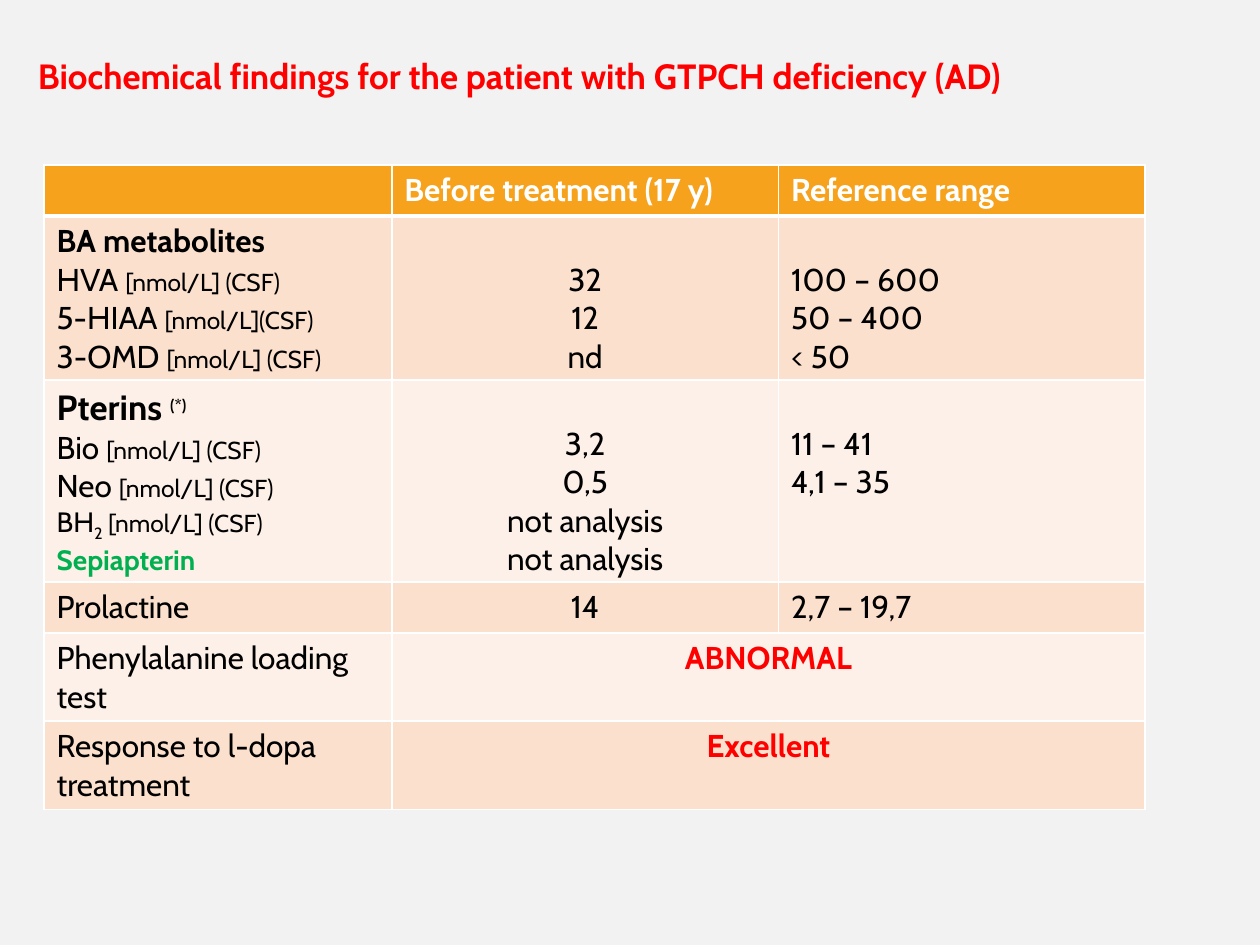
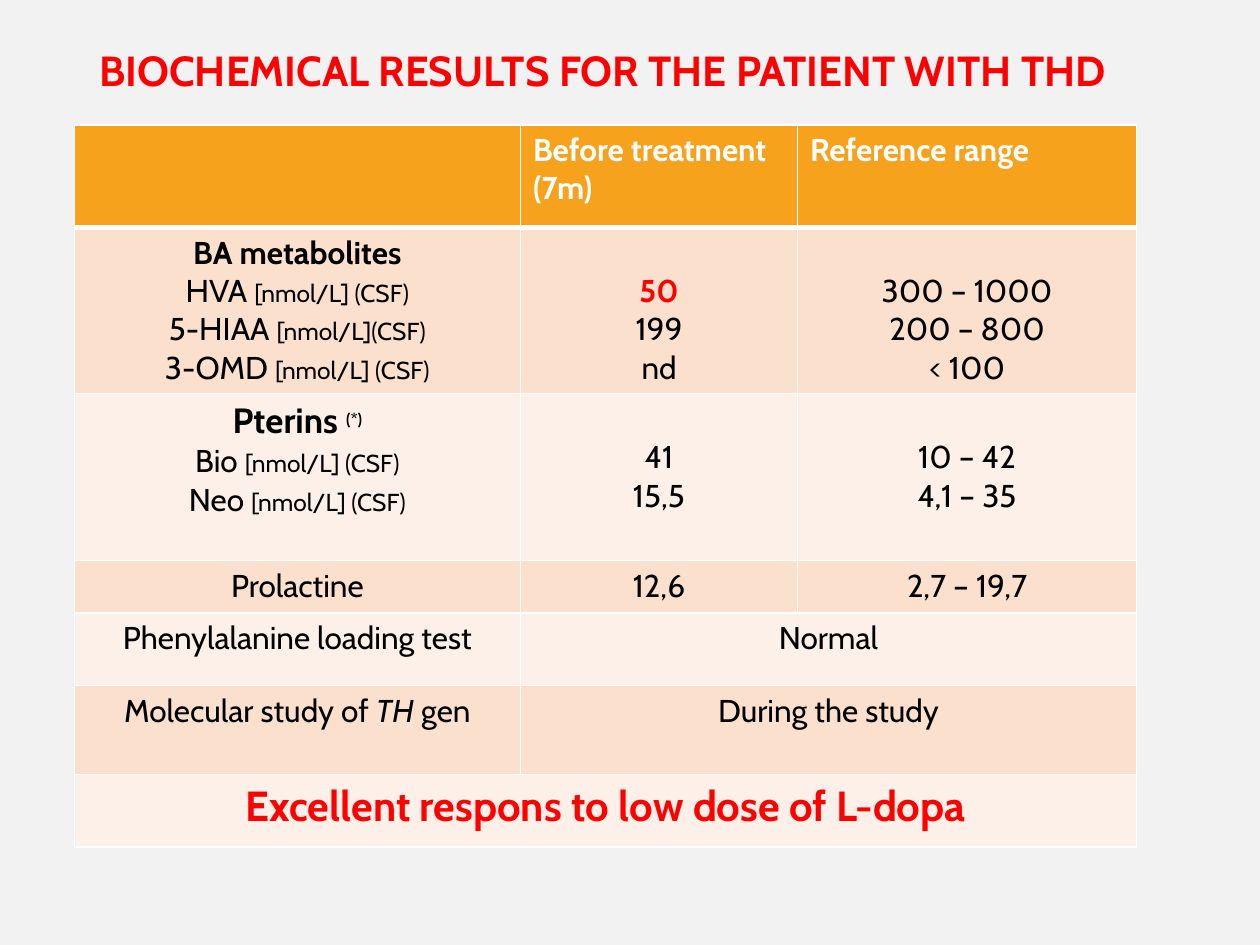
from dataclasses import dataclass

from lxml import etree
from pptx import Presentation
from pptx.dml.color import RGBColor
from pptx.enum.text import MSO_ANCHOR, PP_ALIGN
from pptx.oxml.ns import qn
from pptx.util import Pt

LEFT, CENTER = PP_ALIGN.LEFT, PP_ALIGN.CENTER
MIDDLE = MSO_ANCHOR.MIDDLE
TITLE_ONLY = 5


@dataclass(frozen=True)
class Theme:
    """Colours, font and type sizes shared by the slides."""
    font: str = "Cabin"
    background: str = "F2F2F2"
    header: str = "F6A21D"
    bands: tuple = ("FBE0CD", "FDF0E8")
    white: str = "FFFFFF"
    black: str = "000000"
    red: str = "FF0000"
    green: str = "00B050"
    large: int = 24
    heading: int = 20
    body: int = 18
    small: int = 16
    unit: int = 14
    line: float = 1
    header_line: float = 3
    cell_margin: float = 3.6
    line_pitch: float = 22


THEME = Theme()


@dataclass(frozen=True)
class Span:
    """A piece of text with its own formatting."""
    text: str
    size: int = THEME.body
    color: str = THEME.black
    bold: bool = False
    italic: bool = False
    baseline: int = 0


@dataclass(frozen=True)
class Cell:
    """The lines of a table cell, and how many columns it covers."""
    lines: tuple
    columns: int = 1
    below_heading: bool = False


def measure(name, unit="[nmol/L] (CSF)", size=THEME.body):
    """Return a line with a metabolite and its unit."""
    return Span(f"{name} ", size), Span(unit, THEME.unit)


def strong(text, color=THEME.red, size=THEME.body):
    """Return a bold coloured line."""
    return (Span(text, size, color, bold=True),)


def plain(text, columns=1):
    """Return a cell with one plain line."""
    return Cell(((Span(text),),), columns)


def finding(text, columns=2, size=THEME.body):
    """Return a cell with one bold red line."""
    return Cell((strong(text, size=size),), columns)


def values(*entries):
    """Return a cell whose lines start level with the second label."""
    lines = tuple((Span(entry),) if isinstance(entry, str) else entry for entry in entries)
    return Cell(lines, below_heading=True)


def header(*titles):
    """Return the header row, with an empty first cell."""
    return [Cell(())] + [Cell((strong(title, THEME.white),)) for title in titles]


METABOLITES = Cell((
    strong("BA metabolites", THEME.black),
    measure("HVA"),
    measure("5-HIAA", "[nmol/L](CSF)"),
    measure("3-OMD"),
))
PTERINS = (
    (Span("Pterins ", THEME.heading, bold=True),
     Span("(*)", THEME.small, bold=True, baseline=30)),
    measure("Bio"),
    measure("Neo"),
)
OTHER_PTERINS = (
    (Span("BH", THEME.small), Span("2", THEME.small, baseline=-25),
     Span(" [nmol/L] (CSF)", THEME.unit)),
    strong("Sepiapterin", THEME.green, THEME.small),
)


def write_line(paragraph, spans, alignment):
    """Fill a paragraph with formatted spans."""
    paragraph.alignment = alignment
    for span in spans:
        run = paragraph.add_run()
        run.text = span.text
        font = run.font
        font.name = THEME.font
        font.size = Pt(span.size)
        font.bold = span.bold
        font.italic = span.italic
        font.color.rgb = RGBColor.from_string(span.color)
        if span.baseline:
            run._r.get_or_add_rPr().set("baseline", str(span.baseline * 1000))


def add_border(cell, side, width):
    """Add a white border on one side of a cell."""
    properties = cell._tc.get_or_add_tcPr()
    line = etree.SubElement(properties, qn(f"a:ln{side}"), w=str(Pt(width)))
    fill = etree.SubElement(line, qn("a:solidFill"))
    etree.SubElement(fill, qn("a:srgbClr"), val=THEME.white)


def style_cell(cell, row_index):
    """Give a cell its borders, margins and banded fill."""
    heavy_sides = {0: "B", 1: "T"}.get(row_index, "")
    for side in "LRTB":
        add_border(cell, side, THEME.header_line if side in heavy_sides else THEME.line)
    color = THEME.bands[(row_index - 1) % 2] if row_index else THEME.header
    cell.fill.solid()
    cell.fill.fore_color.rgb = RGBColor.from_string(color)
    cell.margin_top = Pt(THEME.cell_margin)
    cell.margin_bottom = Pt(1)


def write_cell(cell, content, alignment):
    """Write the lines of one cell."""
    if content.below_heading:
        cell.margin_top = Pt(THEME.cell_margin + THEME.line_pitch)
    text_frame = cell.text_frame
    for index, spans in enumerate(content.lines):
        paragraph = text_frame.add_paragraph() if index else text_frame.paragraphs[0]
        write_line(paragraph, spans, alignment)


def add_results_table(slide, left, top, widths, heights, alignments, rows):
    """Add a table of results with a header and banded rows."""
    frame = slide.shapes.add_table(len(rows), len(widths), Pt(left), Pt(top),
                                   Pt(sum(widths)), Pt(sum(heights)))
    table = frame.table
    table.first_row = table.horz_banding = False
    for column, width in zip(table.columns, widths):
        column.width = Pt(width)
    for row_index, (contents, height) in enumerate(zip(rows, heights)):
        table.rows[row_index].height = Pt(height)
        for cell in table.rows[row_index].cells:
            style_cell(cell, row_index)
        column_index = 0
        for content in contents:
            cell = table.cell(row_index, column_index)
            last_column = column_index + content.columns - 1
            if content.columns > 1:
                cell.merge(table.cell(row_index, last_column))
            if row_index == 0:
                alignment = LEFT
            elif content.columns > 1:
                alignment = CENTER
            else:
                alignment = alignments[column_index]
            write_cell(cell, content, alignment)
            column_index = last_column + 1


def add_titled_slide(presentation, text, left, top, size):
    """Add a slide with a red title."""
    slide = presentation.slides.add_slide(presentation.slide_layouts[TITLE_ONLY])
    title = slide.shapes.title
    title.left, title.top, title.width, title.height = Pt(left), Pt(top), Pt(640), Pt(32)
    title.text_frame.vertical_anchor = MIDDLE
    title.text_frame.word_wrap = True
    write_line(title.text_frame.paragraphs[0], strong(text, size=size), LEFT)
    return slide


def add_gtpch_slide(presentation):
    """Add the findings for GTPCH deficiency."""
    slide = add_titled_slide(
        presentation, "Biochemical findings for the patient with GTPCH deficiency (AD)",
        14.4, 27.4, THEME.heading)
    rows = [
        header("Before treatment (17 y)", "Reference range"),
        [METABOLITES, values("32", "12", "nd"), values("100 – 600", "50 – 400", "< 50")],
        [Cell(PTERINS + OTHER_PTERINS),
         values("3,2", "0,5", "not analysis", "not analysis"),
         values("11 – 41", "4,1 – 35")],
        [plain("Prolactine"), plain("14"), plain("2,7 – 19,7")],
        [plain("Phenylalanine loading test"), finding("ABNORMAL")],
        [plain("Response to l-dopa treatment"), finding("Excellent")],
    ]
    add_results_table(slide, 25.2, 94.3, (198.7, 221, 209.5),
                      (29.2, 93.6, 115.4, 29.2, 50.4, 50.4), (LEFT, CENTER, LEFT), rows)


def add_thd_slide(presentation):
    """Add the results for THD."""
    slide = add_titled_slide(
        presentation, "BIOCHEMICAL RESULTS FOR THE PATIENT WITH THD",
        49.6, 24, THEME.large)
    gene = Cell(((Span("Molecular study of "), Span("TH", italic=True), Span(" gen")),))
    rows = [
        header("Before treatment (7m)", "Reference range"),
        [METABOLITES, values(strong("50"), "199", "nd"),
         values("300 – 1000", "200 – 800", "< 100")],
        [Cell(PTERINS), values("41", "15,5"), values("10 – 42", "4,1 – 35")],
        [plain("Prolactine"), plain("12,6"), plain("2,7 – 19,7")],
        [plain("Phenylalanine loading test"), plain("Normal", 2)],
        [gene, plain("During the study", 2)],
        [finding("Excellent respons to low dose of L-dopa", 3, THEME.large)],
    ]
    add_results_table(slide, 42.5, 71.3, (254.9, 158.4, 193.7),
                      (58.6, 95, 95.4, 30, 41.4, 51, 41.4), (CENTER,) * 3, rows)


def main():
    """Build and save the presentation."""
    presentation = Presentation()
    presentation.slide_width, presentation.slide_height = Pt(720), Pt(540)
    background = presentation.slide_master.background.fill
    background.solid()
    background.fore_color.rgb = RGBColor.from_string(THEME.background)
    add_gtpch_slide(presentation)
    add_thd_slide(presentation)
    presentation.save("out.pptx")


if __name__ == "__main__":
    main()
